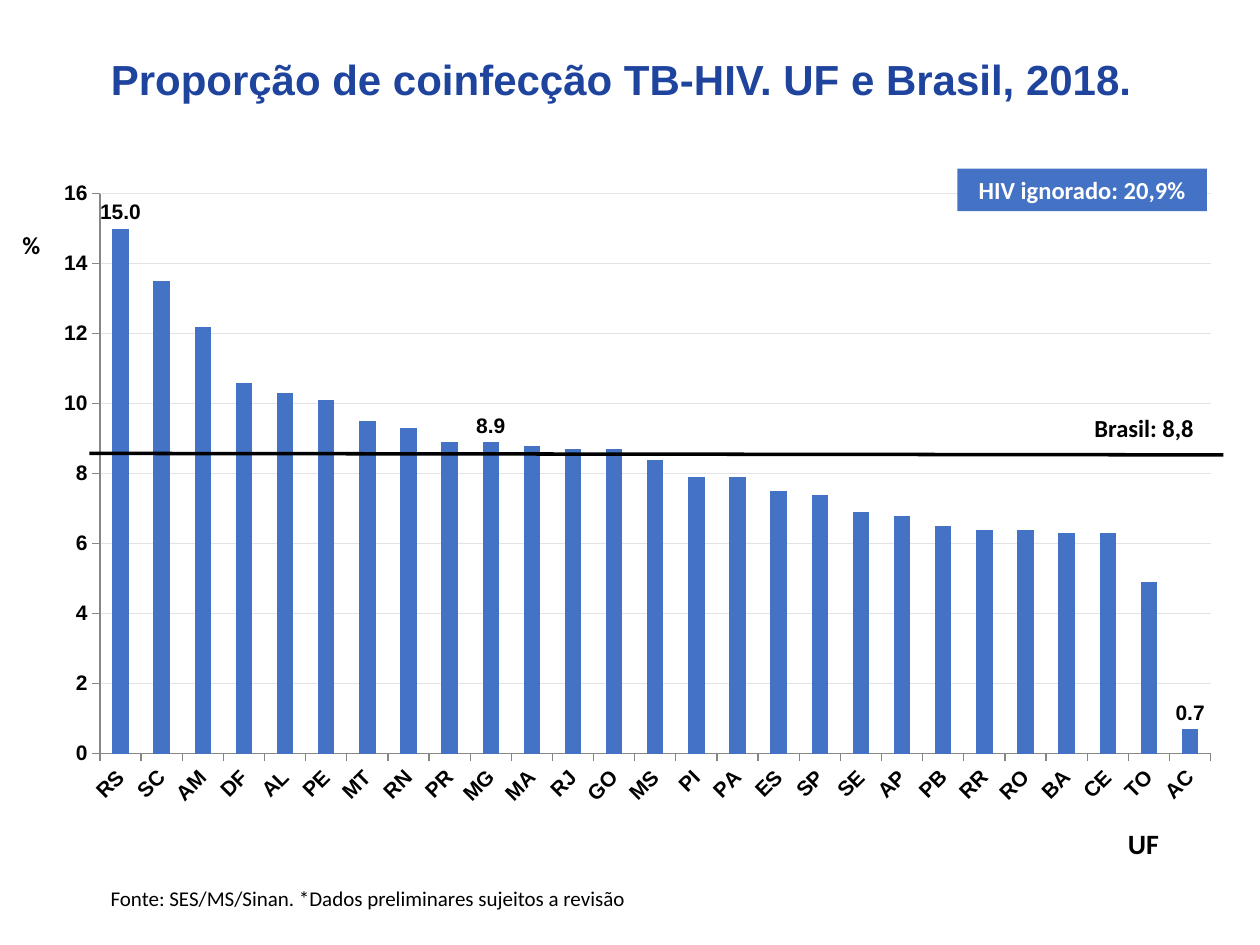
from lxml import etree
from pptx import Presentation
from pptx.chart.data import CategoryChartData
from pptx.dml.color import RGBColor
from pptx.enum.chart import XL_CHART_TYPE as ChartType, XL_LABEL_POSITION as LabelPosition
from pptx.enum.chart import XL_TICK_MARK as TickMark
from pptx.enum.shapes import MSO_CONNECTOR as Connector, MSO_SHAPE as ShapeKind
from pptx.enum.text import MSO_ANCHOR as Anchor, PP_ALIGN as Align
from pptx.oxml import parse_xml
from pptx.oxml.ns import nsdecls, qn
from pptx.util import Cm, Pt

BLACK, WHITE, BLUE, NAVY = "000000", "FFFFFF", "4472C4", "1F449E"
GRID, AXIS = "E3E3E3", "868686"

STATES = ("RS SC AM DF AL PE MT RN PR MG MA RJ GO MS PI PA ES SP SE AP "
          "PB RR RO BA CE TO AC").split()
RATES = [15, 13.5, 12.2, 10.6, 10.3, 10.1, 9.5, 9.3, 8.9, 8.9, 8.8, 8.7, 8.7, 8.4,
         7.9, 7.9, 7.5, 7.4, 6.9, 6.8, 6.5, 6.4, 6.4, 6.3, 6.3, 4.9, 0.7]
LABELLED = {"RS", "MG", "AC"}


def color(value):
    return RGBColor.from_string(value)


def style_font(font, size, name="Calibri", value=BLACK, bold=True):
    font.size, font.name, font.bold = Pt(size), name, bold
    font.color.rgb = color(value)


def write(shape, text, size, align=Align.LEFT, **style):
    frame = shape.text_frame
    frame.word_wrap = True
    paragraph = frame.paragraphs[0]
    paragraph.alignment = align
    run = paragraph.add_run()
    run.text = text
    style_font(run.font, size, **style)
    return paragraph


def add_label(slide, box, text, size, align=Align.LEFT, bold=True):
    shape = slide.shapes.add_textbox(*map(Cm, box))
    write(shape, text, size, align, bold=bold)


def add_title(slide, box):
    title = slide.shapes.title
    title.left, title.top, title.width, title.height = map(Cm, box)
    title.text_frame.vertical_anchor = Anchor.TOP
    paragraph = write(title, "Proporção de coinfecção TB-HIV. UF e Brasil, 2018.", 24,
                      name="Arial", value=NAVY)
    paragraph.line_spacing = 0.9


def set_plot_area(chart, x, y, w, h):
    plot_area = chart._chartSpace.chart.plotArea
    for old in plot_area.findall(qn("c:layout")):
        plot_area.remove(old)
    layout = parse_xml(f"<c:layout {nsdecls('c')}><c:manualLayout/></c:layout>")
    settings = [("layoutTarget", "inner"), ("xMode", "edge"), ("yMode", "edge"),
                ("x", x), ("y", y), ("w", w), ("h", h)]
    for tag, value in settings:
        etree.SubElement(layout[0], qn(f"c:{tag}")).set("val", str(value))
    plot_area.insert(0, layout)


def label_points(series):
    labels = series.data_labels
    labels.show_value = True
    labels.position = LabelPosition.OUTSIDE_END
    labels.number_format, labels.number_format_is_linked = "0.0", False
    style_font(labels.font, 12, "Arial")
    hidden = [index for index, state in enumerate(STATES) if state not in LABELLED]
    for place, index in enumerate(hidden):
        labels._element.insert(place, parse_xml(
            f'<c:dLbl {nsdecls("c")}><c:idx val="{index}"/><c:delete val="1"/></c:dLbl>'))


def style_axes(chart):
    for axis in (chart.category_axis, chart.value_axis):
        axis.major_tick_mark, axis.minor_tick_mark = TickMark.OUTSIDE, TickMark.NONE
        axis.format.line.color.rgb = color(AXIS)
        axis.format.line.width = Pt(0.75)
        style_font(axis.tick_labels.font, 12, "Arial")
    text_body = chart.category_axis._element.find(qn("c:txPr"))
    text_body.find(qn("a:bodyPr")).set("rot", "-2700000")
    values = chart.value_axis
    values.minimum_scale, values.maximum_scale, values.major_unit = 0, 16, 2
    values.tick_labels.number_format = "0"
    values.tick_labels.number_format_is_linked = False
    values.major_gridlines.format.line.color.rgb = color(GRID)
    values.major_gridlines.format.line.width = Pt(0.25)


def add_rate_chart(slide, box):
    data = CategoryChartData(number_format="0.0")
    data.categories = STATES
    data.add_series("Series 1", RATES)
    frame = slide.shapes.add_chart(ChartType.COLUMN_CLUSTERED, *map(Cm, box), data)
    chart = frame.chart
    chart.has_legend = chart.has_title = False
    style_font(chart.font, 10, bold=False)
    plot = chart.plots[0]
    plot.gap_width, plot.vary_by_categories = 150, False
    series = plot.series[0]
    series.format.fill.solid()
    series.format.fill.fore_color.rgb = color(BLUE)
    label_points(series)
    style_axes(chart)
    set_plot_area(chart, 0.05, 0.04, 0.93, 0.86)


def add_average_line(slide, box):
    left, top, width, height = box
    line = slide.shapes.add_connector(
        Connector.STRAIGHT, Cm(left), Cm(top), Cm(left + width), Cm(top + height))
    line.line.color.rgb = color(BLACK)
    line.line.width = Pt(2)
    etree.SubElement(line._element.spPr, qn("a:effectLst"))


def add_unknown_badge(slide, box):
    badge = slide.shapes.add_shape(ShapeKind.RECTANGLE, *map(Cm, box))
    badge.shadow.inherit = False
    badge.fill.solid()
    badge.fill.fore_color.rgb = color(BLUE)
    badge.line.fill.background()
    write(badge, "HIV ignorado: 20,9%", 14, Align.CENTER, value=WHITE)


def add_chart_region(slide, box):
    left, top, width, height = box
    add_rate_chart(slide, box)
    add_label(slide, (left - 0.61, top + 1.14, 1.19, 0.86), "%", 14)
    add_label(slide, (left + 21.24, top + height + 0.03, 2, 0.94), "UF", 16, Align.CENTER)
    add_average_line(slide, (left + 0.99, top + 5.76, 22.86, 0.03))
    add_label(slide, (left + 20.35, top + 4.82, 3.81, 0.86), "Brasil: 8,8", 14, Align.CENTER)
    add_unknown_badge(slide, (left + 18.49, top + 0.02, 5.03, 0.86))


def add_source(slide, box):
    add_label(slide, box, "Fonte: SES/MS/Sinan. *Dados preliminares sujeitos a revisão", 12,
              bold=False)


def main():
    presentation = Presentation()
    presentation.slide_width, presentation.slide_height = Cm(25.4), Cm(19.05)
    slide = presentation.slides.add_slide(presentation.slide_layouts[5])
    add_title(slide, (1.98, 1.07, 21.59, 3.18))
    add_chart_region(slide, (0.81, 3.38, 24.08, 13.13))
    add_source(slide, (1.98, 17.73, 15.29, 0.76))
    presentation.save("out.pptx")


if __name__ == "__main__":
    main()
